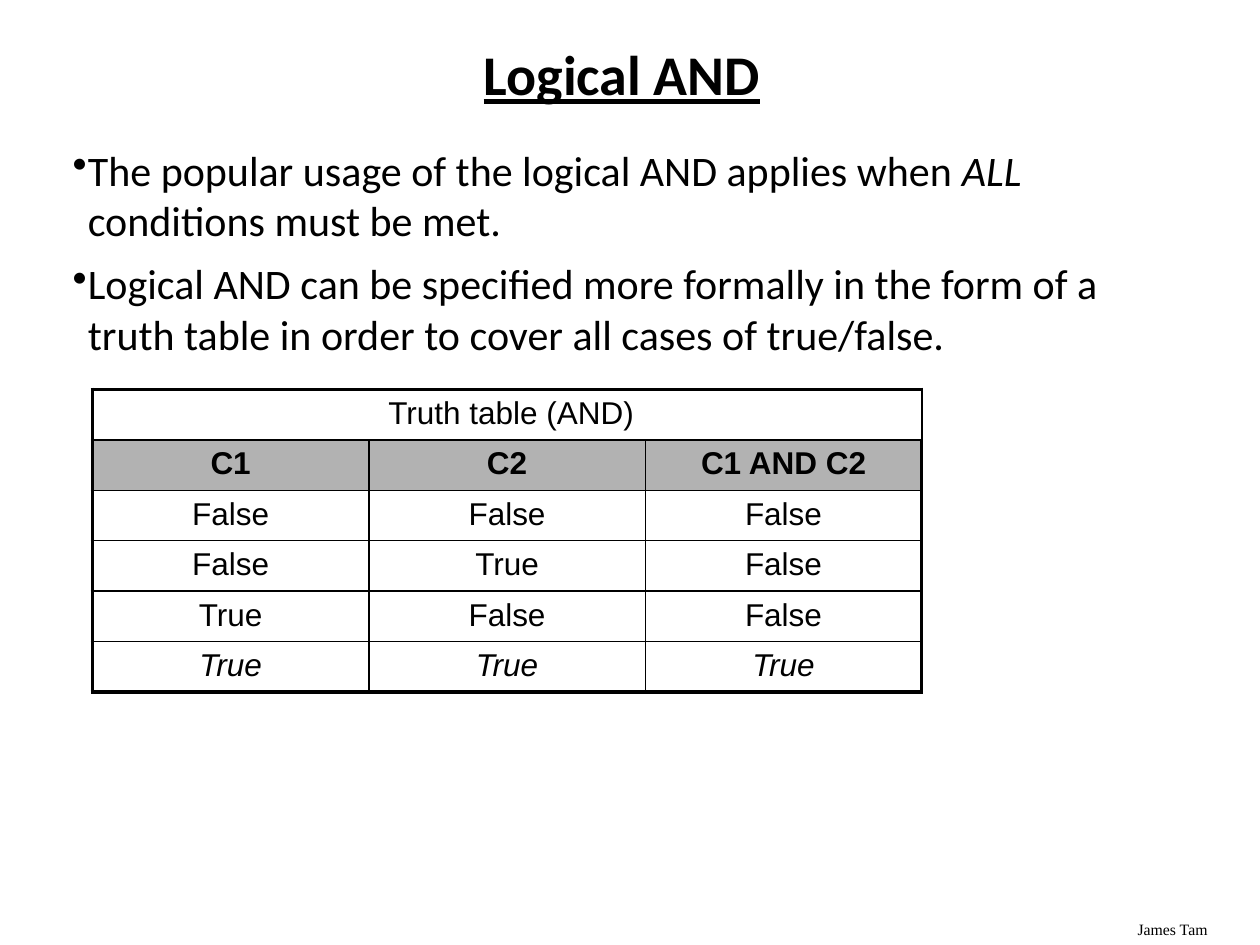
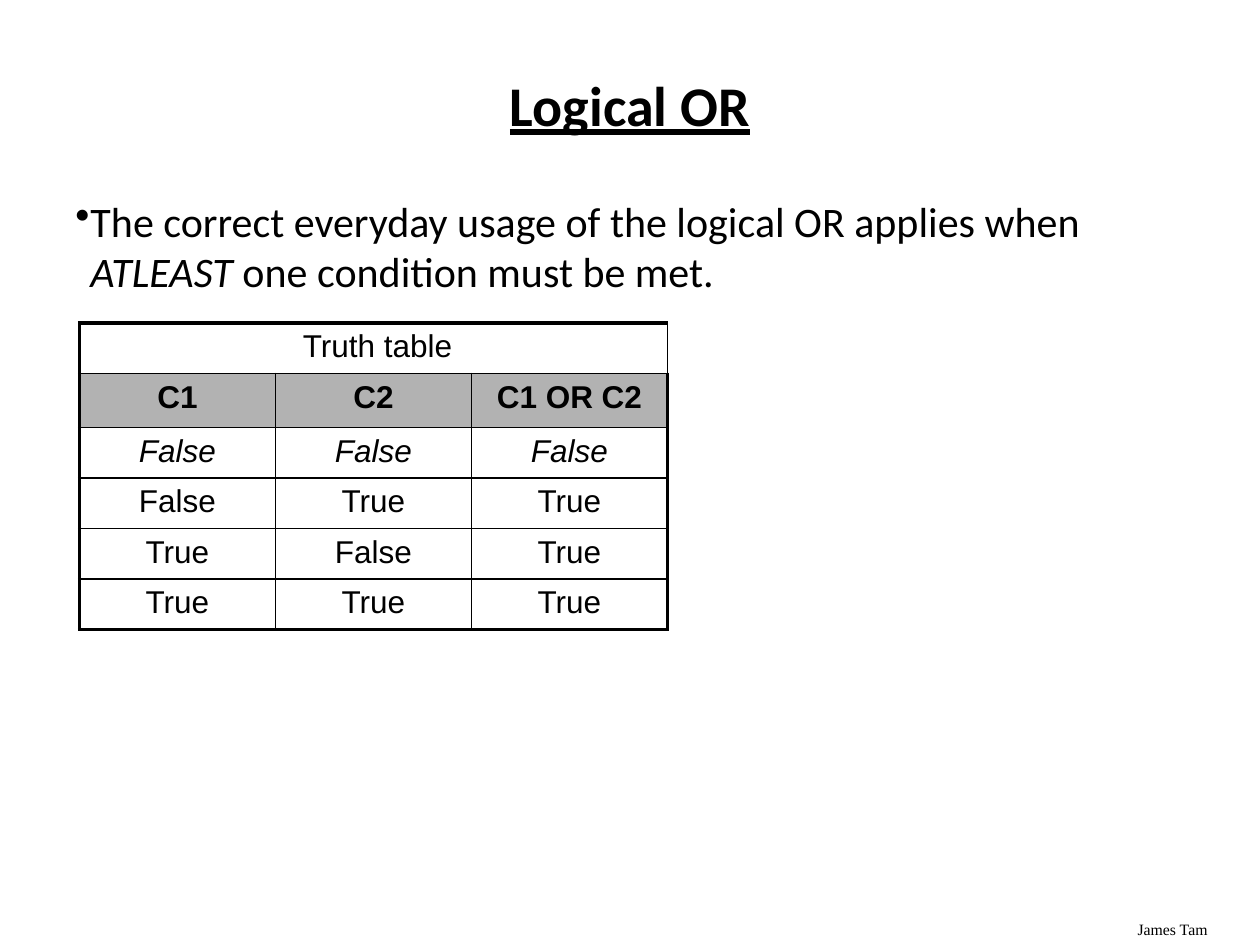
from lxml import etree
from pptx import Presentation
from pptx.dml.color import RGBColor
from pptx.enum.text import MSO_ANCHOR, PP_ALIGN
from pptx.oxml.ns import qn
from pptx.util import Pt

CENTER = PP_ALIGN.CENTER
MIDDLE = MSO_ANCHOR.MIDDLE
COLORS = {"text": "000000", "border": "000000", "header": "B2B2B2"}
TITLE_FONT = BODY_FONT = "Calibri"
TABLE_FONT = "Arial"
FOOTER_FONT = "Times New Roman"
THIN, THICK = 1, 2.25
BULLET_INDENT = 8.64


def style(paragraph, font_name, size, bold=False, italic=False):
    font = paragraph.font
    font.name, font.size = font_name, Pt(size)
    font.bold, font.italic = bold, italic
    font.color.rgb = RGBColor.from_string(COLORS["text"])


def add_text_frame(slide, box):
    frame = slide.shapes.add_textbox(*(Pt(length) for length in box)).text_frame
    frame.word_wrap = True
    return frame


def add_title(slide, text, box):
    frame = add_text_frame(slide, box)
    frame.vertical_anchor = MIDDLE
    title = frame.paragraphs[0]
    title.text = text
    title.alignment = CENTER
    title.line_spacing = 0.9
    style(title, TITLE_FONT, 32, bold=True)
    title.font.underline = True


def add_footer(slide):
    author = add_text_frame(slide, (643, 522, 72, 18)).paragraphs[0]
    author.text = "James Tam"
    style(author, FOOTER_FONT, 9)


def add_bullets(slide, bullets, box):
    """Each bullet is a list of text pieces; every second piece is italic."""
    frame = add_text_frame(slide, box)
    for index, pieces in enumerate(bullets):
        bullet = frame.add_paragraph() if index else frame.paragraphs[0]
        bullet.space_after = Pt(7.2)
        properties = bullet._p.get_or_add_pPr()
        properties.set("marL", str(Pt(BULLET_INDENT)))
        properties.set("indent", str(-Pt(BULLET_INDENT)))
        etree.SubElement(properties, qn("a:buChar"), char="•")
        style(bullet, BODY_FONT, 24)
        for position, piece in enumerate(pieces):
            run = bullet.add_run()
            run.text = piece
            if position % 2:
                run.font.italic = True


def set_borders(cell, widths):
    """Draw the left, right, top and bottom borders, in that order."""
    properties = cell._tc.get_or_add_tcPr()
    for side, width in zip("LRTB", widths):
        line = etree.SubElement(properties, qn(f"a:ln{side}"), w=str(Pt(width)))
        fill = etree.SubElement(line, qn("a:solidFill"))
        etree.SubElement(fill, qn("a:srgbClr"), val=COLORS["border"])


def add_truth_table(slide, caption, operator, results, italic_case, box, row_heights):
    cases = [(c1, c2) for c1 in ("False", "True") for c2 in ("False", "True")]
    rows = [(caption, "", ""), ("C1", "C2", f"C1 {operator} C2")]
    rows += [(*case, result) for case, result in zip(cases, results)]
    table = slide.shapes.add_table(len(rows), 3, *(Pt(length) for length in box)).table
    table.first_row = table.horz_banding = False
    for row, height in zip(table.rows, row_heights):
        row.height = Pt(height)
    last_row, last_column = len(rows) - 1, 2
    for r, texts in enumerate(rows):
        for c, text in enumerate(texts):
            cell = table.cell(r, c)
            edges = (c == 0, c == last_column, r == 0, r == last_row)
            set_borders(cell, [THICK if outer else THIN for outer in edges])
            is_header = r == 1
            if is_header:
                cell.fill.solid()
                cell.fill.fore_color.rgb = RGBColor.from_string(COLORS["header"])
            else:
                cell.fill.background()
            value = cell.text_frame.paragraphs[0]
            value.text = text
            value.alignment = CENTER
            style(value, TABLE_FONT, 18, bold=is_header, italic=r == italic_case + 2)
    table.cell(0, 0).merge(table.cell(0, last_column))


def main():
    deck = Presentation()
    deck.slide_width, deck.slide_height = Pt(720), Pt(540)
    blank = deck.slide_layouts[6]

    and_slide = deck.slides.add_slide(blank)
    add_footer(and_slide)
    add_title(and_slide, "Logical AND", (34, 24, 643, 41))
    add_bullets(and_slide, [
        ["The popular usage of the logical AND applies when ", "ALL",
         " conditions must be met."],
        ["Logical AND can be specified more formally in the form of a truth table "
         "in order to cover all cases of true/false."],
    ], (34.5, 79, 634, 384))
    add_truth_table(and_slide, " Truth table (AND)", "AND",
                    ["False", "False", "False", "True"], 3,
                    (52.8, 222.5, 474, 172.8), [28.8] * 6)

    or_slide = deck.slides.add_slide(blank)
    add_footer(or_slide)
    add_title(or_slide, "Logical OR", (36, 21.5, 648, 81))
    add_bullets(or_slide, [
        ["The correct everyday usage of the logical OR applies when ", "ATLEAST",
         " one condition must be met."],
    ], (36, 108, 634, 402))
    add_truth_table(or_slide, " Truth table", "OR",
                    ["False", "True", "True", "True"], 0,
                    (45.4, 184.5, 336, 157), [25.2, 31] + [25.2] * 4)

    deck.save("out.pptx")


if __name__ == "__main__":
    main()
